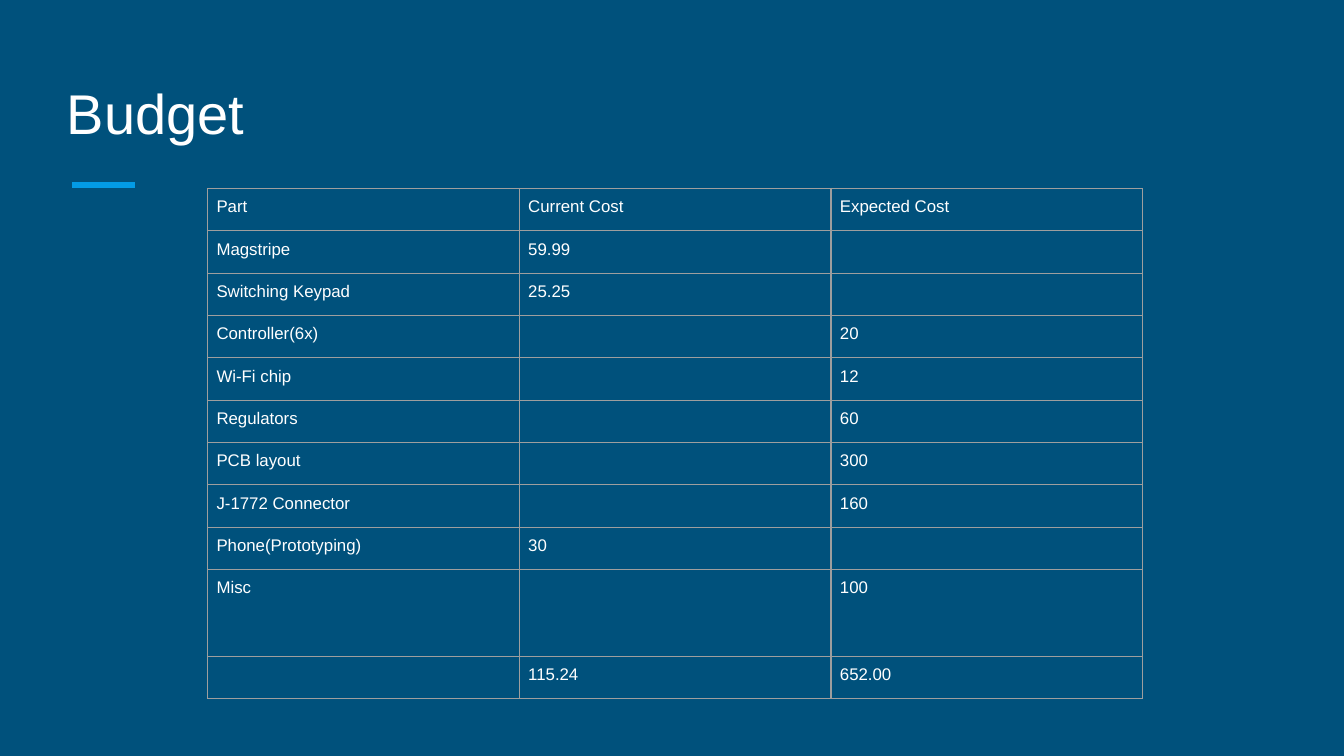
from dataclasses import dataclass

from lxml import etree
from pptx import Presentation
from pptx.dml.color import RGBColor
from pptx.enum import shapes, text
from pptx.oxml import ns
from pptx.util import Pt


@dataclass(frozen=True)
class Theme:
    font: str = "Arial"
    background: str = "00517C"
    ink: str = "FFFFFF"
    accent: str = "039BE5"
    grid: str = "9E9E9E"
    title_size: float = 30
    body_size: float = 9
    accent_width: float = 3
    grid_width: float = 0.75
    cell_inset: float = 4.8


class SlideBuilder:
    def __init__(self, s, theme):
        self.s = s
        self.theme = theme

    def background(self):
        fill = self.s.background.fill
        fill.solid()
        fill.fore_color.rgb = RGBColor.from_string(self.theme.background)

    def style(self, p, size):
        p.font.name = self.theme.font
        p.font.size = Pt(size)
        p.font.color.rgb = RGBColor.from_string(self.theme.ink)

    def title(self, x, y, w, h, words):
        sp = self.s.shapes.add_textbox(Pt(x), Pt(y), Pt(w), Pt(h))
        tf = sp.text_frame
        tf.word_wrap = True
        tf.vertical_anchor = text.MSO_ANCHOR.TOP
        p = tf.paragraphs[0]
        p.text = words
        self.style(p, self.theme.title_size)

    def rule(self, x1, x2, y):
        line = self.s.shapes.add_connector(
            shapes.MSO_CONNECTOR.STRAIGHT, Pt(x1), Pt(y), Pt(x2), Pt(y))
        line.line.color.rgb = RGBColor.from_string(self.theme.accent)
        line.line.width = Pt(self.theme.accent_width)
        etree.SubElement(line._element.spPr, ns.qn("a:effectLst"))

    def borders(self, cell):
        tcPr = cell._tc.get_or_add_tcPr()
        for i, side in enumerate(("lnL", "lnR", "lnT", "lnB")):
            ln = etree.Element(ns.qn(f"a:{side}"), w=str(Pt(self.theme.grid_width)))
            fill = etree.SubElement(ln, ns.qn("a:solidFill"))
            etree.SubElement(fill, ns.qn("a:srgbClr"), val=self.theme.grid)
            tcPr.insert(i, ln)

    def cell(self, cell, words):
        cell.fill.background()
        inset = Pt(self.theme.cell_inset)
        cell.margin_left = cell.margin_right = inset
        cell.margin_top = cell.margin_bottom = inset
        p = cell.text_frame.paragraphs[0]
        p.text = words
        self.style(p, self.theme.body_size)
        if not words:
            end = etree.SubElement(p._p, ns.qn("a:endParaRPr"))
            end.set("sz", str(int(self.theme.body_size * 100)))
        self.borders(cell)

    def table(self, x, y, col_width, row_heights, rows):
        cols = len(rows[0])
        frame = self.s.shapes.add_table(
            len(rows), cols, Pt(x), Pt(y), Pt(col_width * cols), Pt(sum(row_heights)))
        table = frame.table
        table.first_row = table.horz_banding = False
        for column in table.columns:
            column.width = Pt(col_width)
        for row, height, values in zip(table.rows, row_heights, rows):
            row.height = Pt(height)
            for cell, words in zip(row.cells, values):
                self.cell(cell, words)


BUDGET = [
    ("Part", "Current Cost", "Expected Cost"),
    ("Magstripe", "59.99", ""),
    ("Switching Keypad", "25.25", ""),
    ("Controller(6x)", "", "20"),
    ("Wi-Fi chip", "", "12"),
    ("Regulators", "", "60"),
    ("PCB layout", "", "300"),
    ("J-1772 Connector", "", "160"),
    ("Phone(Prototyping)", "30", ""),
    ("Misc", "", "100"),
    ("", "115.24", "652.00"),
]
ROW_HEIGHT = 22.7
MISC_HEIGHT = 46.6


def main():
    prs = Presentation()
    prs.slide_width, prs.slide_height = Pt(720), Pt(405)
    slide = SlideBuilder(prs.slides.add_slide(prs.slide_layouts[6]), Theme())
    slide.background()
    slide.rule(38.6, 72.3, 99)
    slide.title(28.8, 38.5, 360, 77.8, "Budget")
    heights = [MISC_HEIGHT if row[0] == "Misc" else ROW_HEIGHT for row in BUDGET]
    slide.table(111.2, 101, 167, heights, BUDGET)
    prs.save("out.pptx")


if __name__ == "__main__":
    main()
